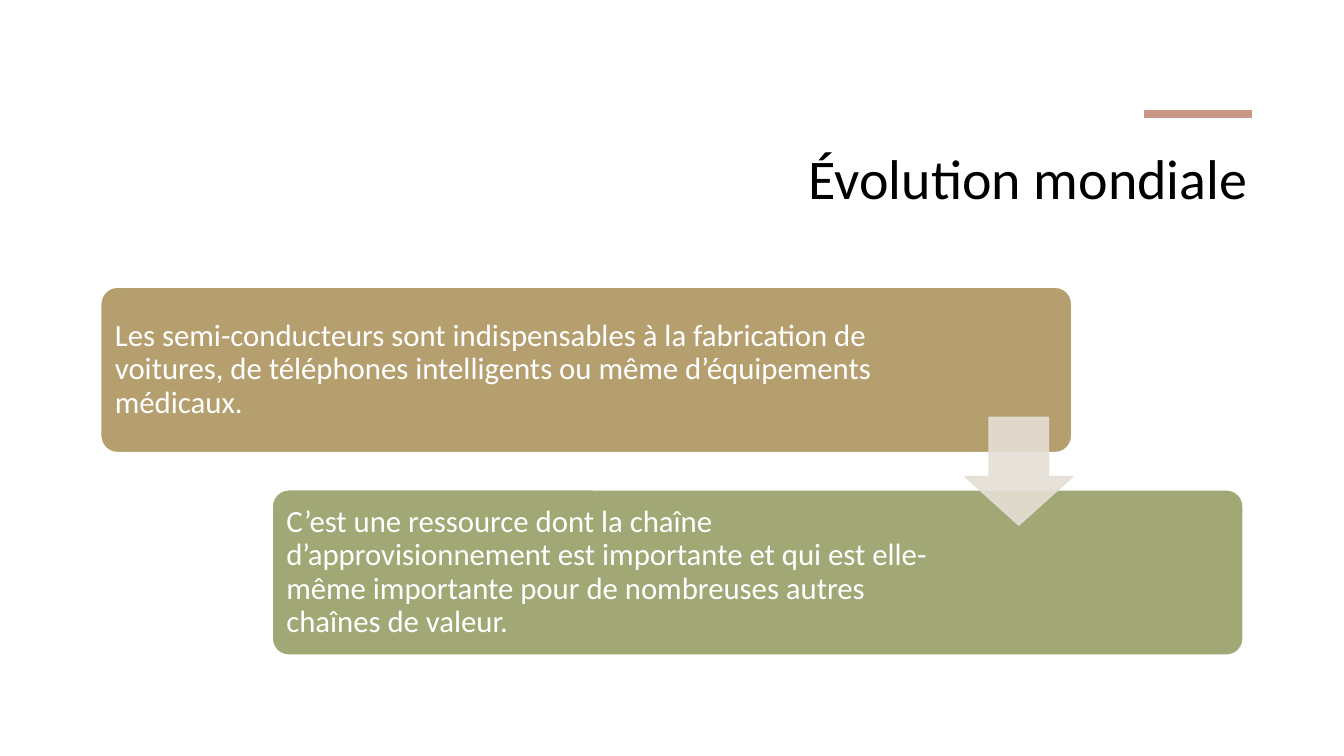
from lxml.etree import SubElement
from pptx import Presentation
from pptx.dml.color import RGBColor
from pptx.enum.shapes import MSO_CONNECTOR, MSO_SHAPE
from pptx.enum.text import MSO_ANCHOR, PP_ALIGN
from pptx.oxml.ns import qn
from pptx.util import Inches, Pt

BLACK = RGBColor(0x00, 0x00, 0x00)
WHITE = RGBColor(0xFF, 0xFF, 0xFF)
ROSE = RGBColor(0xC8, 0x97, 0x85)
SAND = RGBColor(0xB5, 0x9F, 0x6F)
OLIVE = RGBColor(0xA2, 0xA7, 0x76)
BEIGE = RGBColor(0xE5, 0xDF, 0xD5)

CARD_WIDTH, CARD_HEIGHT = 9.63, 1.64
CARD_LEFT, CARD_TOP = 1, 2.85
STEP_X, STEP_Y = 1.7, 2.01
TEXT_INSET = 0.05

# Text, text width and fill of each step
STEPS = [
    ("Les semi-conducteurs sont indispensables à la fabrication de voitures, "
     "de téléphones intelligents ou même d’équipements médicaux.", 7.94, SAND),
    ("C’est une ressource dont la chaîne d’approvisionnement est importante "
     "et qui est elle-même importante pour de nombreuses autres chaînes de "
     "valeur.", 6.77, OLIVE),
]


class SlideBuilder:
    font = "Calibri"

    def __init__(self, slide):
        self.slide = slide

    def text(self, wording, left, top, width, height, size, color,
             align=PP_ALIGN.LEFT, anchor=MSO_ANCHOR.TOP, margin=0.1, spacing=1.0):
        box = self.slide.shapes.add_textbox(
            Inches(left), Inches(top), Inches(width), Inches(height))
        frame = box.text_frame
        frame.word_wrap = True
        frame.vertical_anchor = anchor
        frame.margin_left = frame.margin_right = Inches(margin)
        frame.margin_top = frame.margin_bottom = Inches(min(margin, 0.09) if
                                                        anchor == MSO_ANCHOR.MIDDLE else 0.05)
        frame.text = wording
        paragraph = frame.paragraphs[0]
        paragraph.alignment = align
        paragraph.line_spacing = spacing
        font = paragraph.runs[0].font
        font.name, font.size, font.color.rgb = self.font, Pt(size), color

    def shape(self, preset, left, top, width, height, adjustments, fill, outline):
        shape = self.slide.shapes.add_shape(
            preset, Inches(left), Inches(top), Inches(width), Inches(height))
        for index, value in enumerate(adjustments):
            shape.adjustments[index] = value
        shape.shadow.inherit = False
        shape.fill.solid()
        shape.fill.fore_color.rgb = fill
        shape.line.color.rgb = outline
        shape.line.width = Pt(1)
        return shape

    def line(self, x1, y1, x2, y2, color, width):
        line = self.slide.shapes.add_connector(
            MSO_CONNECTOR.STRAIGHT, Inches(x1), Inches(y1), Inches(x2), Inches(y2))
        line.line.color.rgb = color
        line.line.width = Pt(width)
        SubElement(line._element.spPr, qn("a:effectLst"))

    def card(self, wording, left, top, text_width, fill):
        self.shape(MSO_SHAPE.ROUNDED_RECTANGLE, left, top, CARD_WIDTH, CARD_HEIGHT,
                   [0.1], fill, WHITE)
        self.text(wording, left + TEXT_INSET, top + TEXT_INSET, text_width,
                  CARD_HEIGHT - 2 * TEXT_INSET, 22, WHITE,
                  anchor=MSO_ANCHOR.MIDDLE, margin=0.09, spacing=0.9)

    def down_arrow(self, left, top, size, color, opacity):
        arrow = self.shape(MSO_SHAPE.DOWN_ARROW, left, top, size, size,
                           [0.55, 0.45], color, color)
        for color_element in arrow._element.spPr.iter(qn("a:srgbClr")):
            SubElement(color_element, qn("a:alpha"), val=str(opacity * 1000))


def main():
    presentation = Presentation()
    presentation.slide_width = Inches(13.33)
    presentation.slide_height = Inches(7.5)
    builder = SlideBuilder(presentation.slides.add_slide(presentation.slide_layouts[6]))

    builder.text("Évolution mondiale", 1.9, 1.37, 10.57, 1.25, 40, BLACK,
                 align=PP_ALIGN.RIGHT)
    builder.line(11.35, 1.13, 12.42, 1.13, ROSE, 6)
    for index, (wording, text_width, fill) in enumerate(STEPS):
        builder.card(wording, CARD_LEFT + index * STEP_X, CARD_TOP + index * STEP_Y,
                     text_width, fill)
    builder.down_arrow(9.57, 4.14, 1.07, BEIGE, 90)

    presentation.save("out.pptx")


if __name__ == "__main__":
    main()
